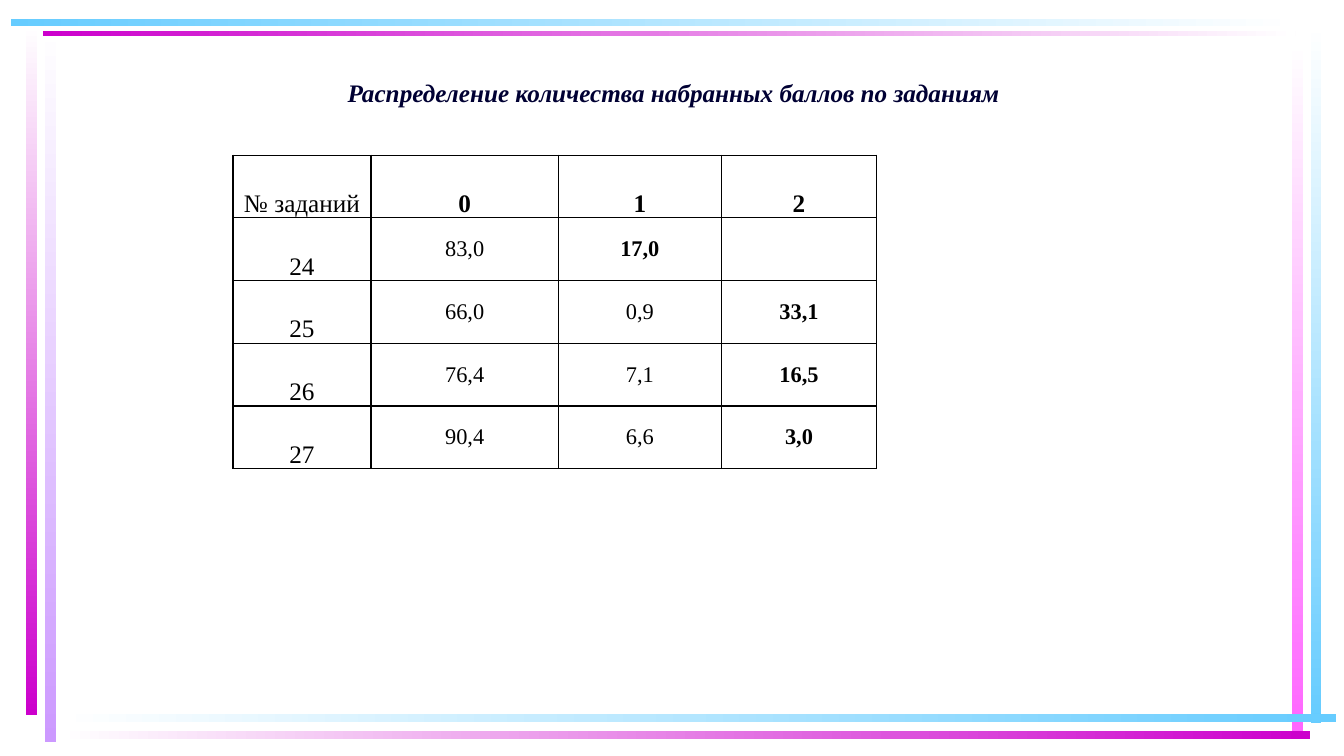
from dataclasses import dataclass

from lxml.etree import SubElement
from pptx import Presentation
from pptx.dml.color import RGBColor
from pptx.enum.shapes import MSO_CONNECTOR, MSO_SHAPE
from pptx.enum.text import MSO_ANCHOR, PP_ALIGN
from pptx.oxml.ns import qn
from pptx.util import Cm, Pt


@dataclass(frozen=True)
class Theme:
    font: str = "Times New Roman"
    title_size: int = 18
    label_size: int = 18
    value_size: int = 16
    title: str = "000033"
    ink: str = "000000"
    white: str = "FFFFFF"
    blue: str = "66CCFF"
    magenta: str = "CC00CC"
    lilac: str = "CC99FF"
    pink: str = "FF66FF"
    border: float = 1
    table_edge: float = 1.5


THEME = Theme()
DOWN, ACROSS = 270, 0  # gradient directions

# Left, top, width, height in cm; first colour, last colour, direction
FRAME_BARS = [
    (1.13, 0.71, 0.28, 17.98, THEME.white, THEME.lilac, DOWN),
    (0.66, 0.64, 0.28, 17.37, THEME.white, THEME.magenta, DOWN),
    (33.05, 0.61, 0.25, 17.6, THEME.white, THEME.blue, DOWN),
    (32.56, 1.07, 0.28, 17.35, THEME.white, THEME.pink, DOWN),
    (1.5, 18, 32.18, 0.2, THEME.white, THEME.blue, ACROSS),
    (1.52, 18.42, 31.5, 0.2, THEME.white, THEME.magenta, ACROSS),
    (1.08, 0.77, 31.57, 0.15, THEME.magenta, THEME.white, ACROSS),
    (0.28, 0.48, 32.39, 0.18, THEME.blue, THEME.white, ACROSS),
]

TITLE = "Распределение количества набранных баллов по заданиям"
COLUMN_WIDTHS = [3.48, 4.72, 4.11, 3.91]
ROW_HEIGHT = 1.58
SCORES = [
    ["№ заданий", "0", "1", "2"],
    ["24", "83,0", "17,0", ""],
    ["25", "66,0", "0,9", "33,1"],
    ["26", "76,4", "7,1", "16,5"],
    ["27", "90,4", "6,6", "3,0"],
]
BOLD_SCORES = {"17,0", "33,1", "16,5", "3,0"}


def add_text(paragraph, text, size, color, bold=False, italic=False):
    run = paragraph.add_run()
    run.text = text
    run.font.name = THEME.font
    run.font.size = Pt(size)
    run.font.bold = bold
    run.font.italic = italic
    run.font.color.rgb = RGBColor.from_string(color)


def add_frame(slide, bars):
    """Gradient bars along the four edges of the slide."""
    for left, top, width, height, first, last, direction in bars:
        bar = slide.shapes.add_shape(
            MSO_SHAPE.RECTANGLE, Cm(left), Cm(top), Cm(width), Cm(height))
        bar.shadow.inherit = False
        bar.line.fill.background()
        bar.fill.gradient()
        bar.fill.gradient_angle = direction
        for stop, color in zip(bar.fill.gradient_stops, (first, last)):
            stop.color.rgb = RGBColor.from_string(color)


def add_title(slide, left, top, width, height):
    box = slide.shapes.add_textbox(Cm(left), Cm(top), Cm(width), Cm(height))
    frame = box.text_frame
    frame.word_wrap = True
    frame.vertical_anchor = MSO_ANCHOR.BOTTOM
    paragraph = frame.paragraphs[0]
    paragraph.line_spacing = 0.8
    add_text(paragraph, TITLE, THEME.title_size, THEME.title, bold=True, italic=True)


def set_borders(cell):
    properties = cell._tc.get_or_add_tcPr()
    for position, side in enumerate(("a:lnL", "a:lnR", "a:lnT", "a:lnB")):
        line = SubElement(properties, qn(side), w=str(Pt(THEME.border)))
        fill = SubElement(line, qn("a:solidFill"))
        SubElement(fill, qn("a:srgbClr"), val=THEME.ink)
        properties.insert(position, line)  # borders come before the fill


def fill_cell(cell, text, is_header, is_label):
    cell.fill.background()
    set_borders(cell)
    if not text:
        return
    cell.margin_left = cell.margin_right = Cm(0.18)
    cell.margin_top = cell.margin_bottom = 0
    paragraph = cell.text_frame.paragraphs[0]
    paragraph.alignment = PP_ALIGN.CENTER
    if is_header or is_label:
        cell.vertical_anchor = MSO_ANCHOR.BOTTOM
        paragraph.line_spacing = 1.15
        add_text(paragraph, text, THEME.label_size, THEME.ink, bold=not is_label)
    else:
        cell.vertical_anchor = MSO_ANCHOR.MIDDLE
        add_text(paragraph, text, THEME.value_size, THEME.ink, bold=text in BOLD_SCORES)


def add_score_table(slide, left, top):
    height = ROW_HEIGHT * len(SCORES)
    table = slide.shapes.add_table(
        len(SCORES), len(COLUMN_WIDTHS), Cm(left), Cm(top),
        Cm(sum(COLUMN_WIDTHS)), Cm(height)).table
    table.first_row = table.horz_banding = False
    for column, width in zip(table.columns, COLUMN_WIDTHS):
        column.width = Cm(width)
    for row_index, scores in enumerate(SCORES):
        table.rows[row_index].height = Cm(ROW_HEIGHT)
        for column_index, text in enumerate(scores):
            fill_cell(table.cell(row_index, column_index), text,
                      is_header=row_index == 0, is_label=column_index == 0)

    # Heavier line on the left edge
    edge = slide.shapes.add_connector(
        MSO_CONNECTOR.STRAIGHT, Cm(left), Cm(top), Cm(left), Cm(top + height))
    edge.line.width = Pt(THEME.table_edge)
    edge.line.color.rgb = RGBColor.from_string(THEME.ink)
    SubElement(edge._element.spPr, qn("a:effectLst"))


def main():
    presentation = Presentation()
    presentation.slide_width = Cm(33.87)
    presentation.slide_height = Cm(19.05)
    slide = presentation.slides.add_slide(presentation.slide_layouts[6])
    add_frame(slide, FRAME_BARS)
    add_title(slide, 8.51, 1.6, 18.95, 1.22)
    add_score_table(slide, 5.87, 3.91)
    presentation.save("out.pptx")


if __name__ == "__main__":
    main()
